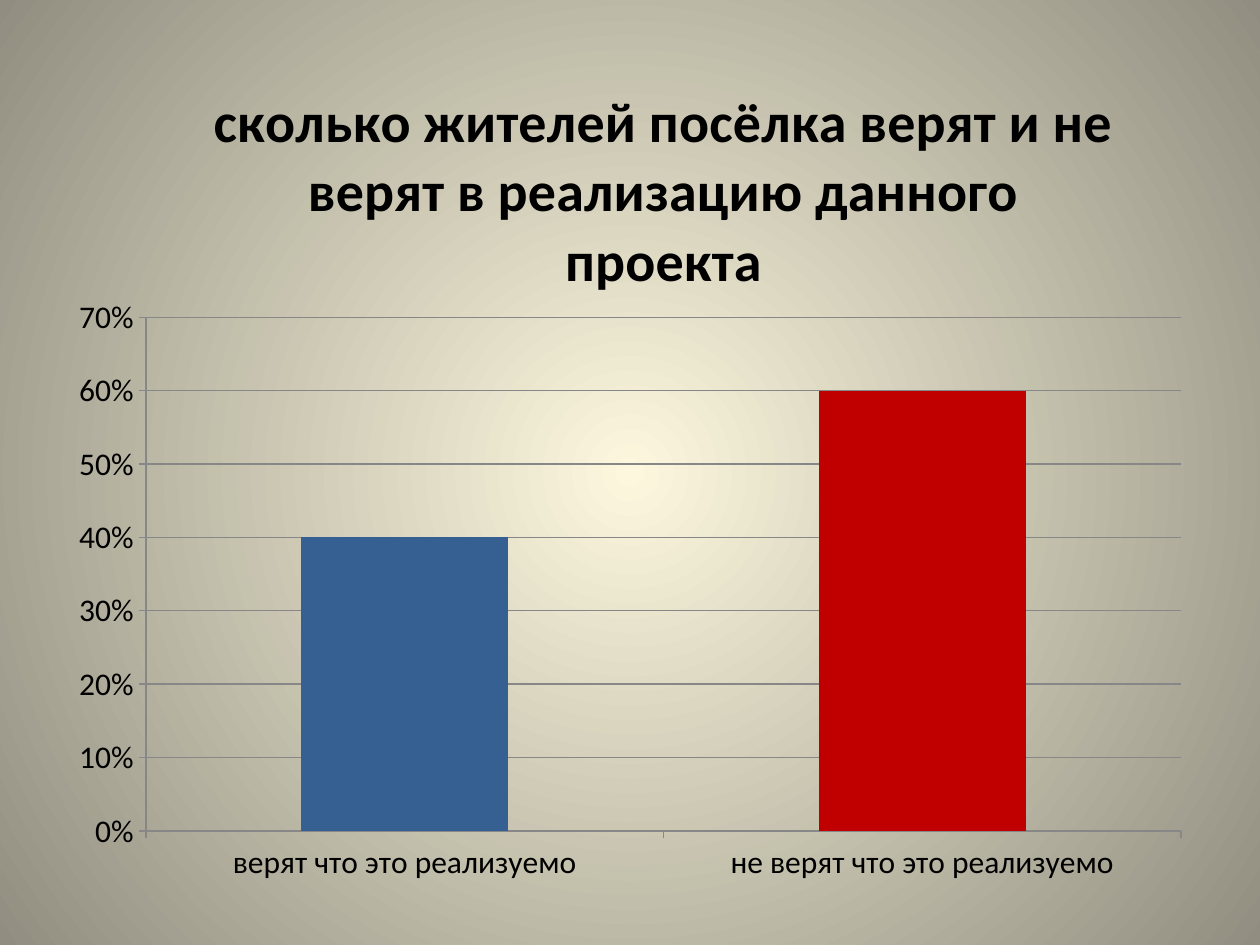
import pptx
import pptx.chart.data
import pptx.dml.color
import pptx.enum.chart
import pptx.oxml
import pptx.oxml.ns
import pptx.util

RGB = pptx.dml.color.RGBColor
BLACK = RGB(0x00, 0x00, 0x00)
GRAY = RGB(0x87, 0x87, 0x87)
BLUE = RGB(0x37, 0x60, 0x92)
RED = RGB(0xC0, 0x00, 0x00)
CREAM = RGB(0xFC, 0xF7, 0xDD)
TAUPE = RGB(0x91, 0x8E, 0x81)

PX = 914400 / 126
FONT = "Calibri"
BLANK = 6


def px(n):
    return pptx.util.Emu(round(n * PX))


class Deck:
    """Holds the style and the current slide."""

    def __init__(self, width, height):
        self.prs = pptx.Presentation()
        self.prs.slide_width, self.prs.slide_height = px(width), px(height)
        self.s = self.prs.slides.add_slide(self.prs.slide_layouts[BLANK])

    def background(self, inner, outer):
        """Radial gradient from the centre of the slide."""
        fill = self.s.background.fill
        fill.gradient()
        for stop, color, position in zip(fill.gradient_stops, (inner, outer), (0, 1)):
            stop.color.rgb = color
            stop.position = position
        grad = self.s._element.find(".//" + pptx.oxml.ns.qn("a:gradFill"))
        grad.remove(grad.find(pptx.oxml.ns.qn("a:lin")))
        grad.append(pptx.oxml.parse_xml(
            f'<a:path {pptx.oxml.ns.nsdecls("a")} path="circle">'
            '<a:fillToRect l="50000" t="50000" r="50000" b="50000"/></a:path>'))

    def font(self, font, size, bold=False):
        font.name, font.size, font.bold = FONT, pptx.util.Pt(size), bold
        font.color.rgb = BLACK

    def layout(self, parent, index, **values):
        """Place a chart part by fractions of the chart area."""
        for old in parent.findall(pptx.oxml.ns.qn("c:layout")):
            parent.remove(old)
        target = '<c:layoutTarget val="inner"/>' if "w" in values else ""
        modes = "".join(f'<c:{k}Mode val="edge"/>' for k in "xy")
        items = "".join(f'<c:{k} val="{v}"/>' for k, v in values.items())
        parent.insert(index, pptx.oxml.parse_xml(
            f'<c:layout {pptx.oxml.ns.nsdecls("c")}><c:manualLayout>'
            f'{target}{modes}{items}</c:manualLayout></c:layout>'))

    def axis(self, axis):
        self.font(axis.tick_labels.font, 18)
        axis.major_tick_mark = pptx.enum.chart.XL_TICK_MARK.OUTSIDE
        axis.format.line.color.rgb = GRAY
        axis.format.line.width = pptx.util.Pt(0.75)

    def column_chart(self, title, answers, colors, left, top, width, height):
        data = pptx.chart.data.CategoryChartData(number_format="0%")
        data.categories = list(answers)
        data.add_series("Series 1", list(answers.values()))
        chart = self.s.shapes.add_chart(
            pptx.enum.chart.XL_CHART_TYPE.COLUMN_CLUSTERED,
            px(left), px(top), px(width), px(height), data).chart
        chart.has_legend = False
        self.font(chart.font, 10)

        # Title
        tf = chart.chart_title.text_frame
        tf.text = title
        self.font(tf.paragraphs[0].font, 32, bold=True)
        self.layout(chart.chart_title._element, 1, x=0.13, y=0.04)

        # Axes and gridlines
        self.axis(chart.category_axis)
        value = chart.value_axis
        self.axis(value)
        value.minimum_scale, value.maximum_scale, value.major_unit = 0, 0.7, 0.1
        value.tick_labels.number_format = "0%"
        value.tick_labels.number_format_is_linked = False
        value.has_major_gridlines = True
        value.major_gridlines.format.line.color.rgb = GRAY
        value.major_gridlines.format.line.width = pptx.util.Pt(0.75)

        # Columns
        plot = chart.plots[0]
        plot.gap_width = 150
        plot.vary_by_categories = False
        series = plot.series[0]
        series.format.fill.solid()
        series.format.fill.fore_color.rgb = colors[-1]
        for i, color in enumerate(colors[:-1]):
            fill = series.points[i].format.fill
            fill.solid()
            fill.fore_color.rgb = color
        area = chart._chartSpace.find(".//" + pptx.oxml.ns.qn("c:plotArea"))
        self.layout(area, 0, x=0.08, y=0.325, w=0.9, h=0.595)


def main():
    deck = Deck(1260, 945)
    deck.background(CREAM, TAUPE)
    deck.column_chart(
        "сколько жителей посёлка верят и не верят в реализацию данного проекта",
        {"верят что это реализуемо": 0.4, "не верят что это реализуемо": 0.6},
        (BLUE, RED), 54, 37, 1150, 863)
    deck.prs.save("out.pptx")


if __name__ == "__main__":
    main()
